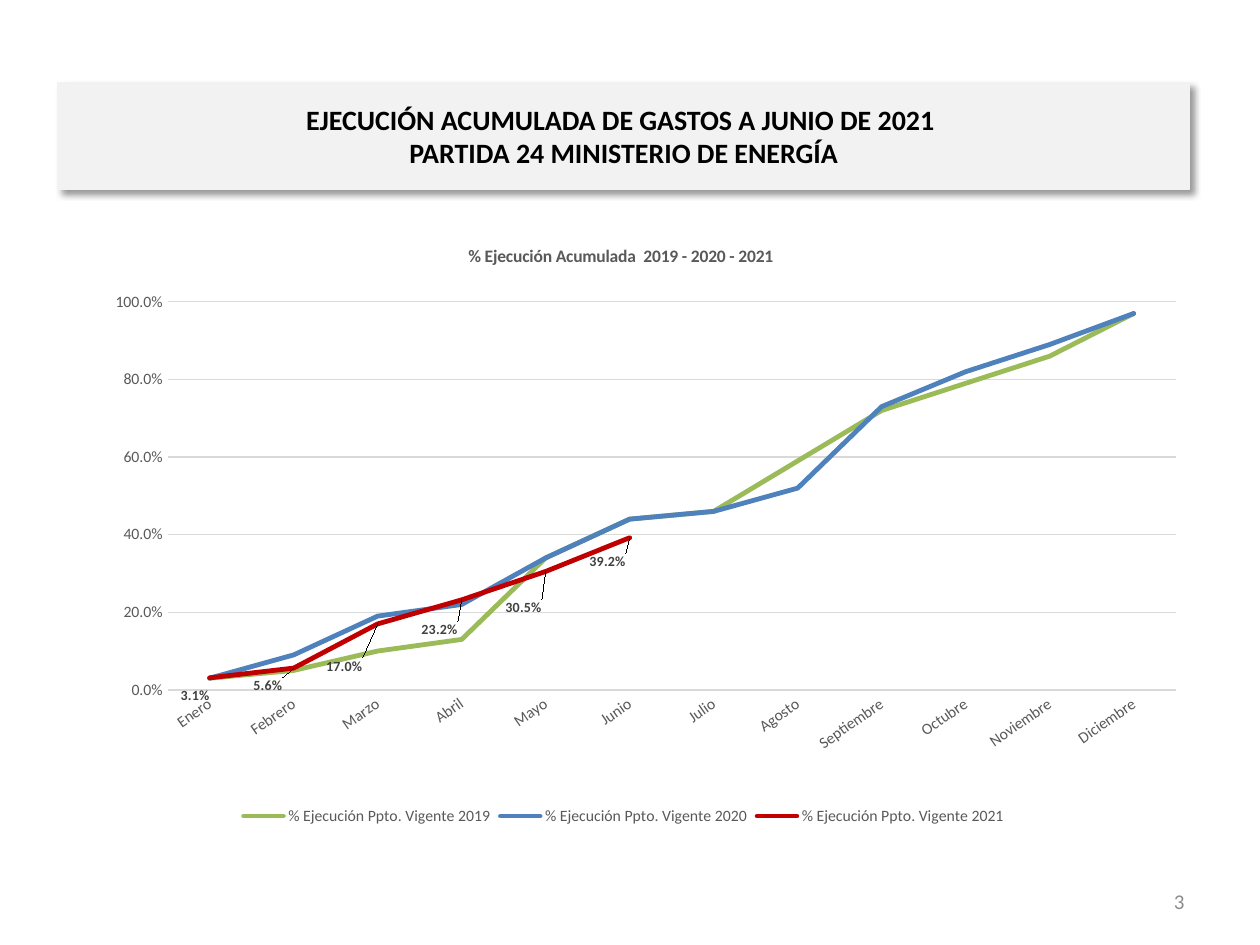
from lxml import etree
from pptx import Presentation, util as u
from pptx.chart.data import CategoryChartData
from pptx.dml.color import RGBColor
from pptx.enum import chart as ch, shapes, text
from pptx.oxml import parse_xml
from pptx.oxml.ns import nsdecls, qn

BLACK = RGBColor(0x00, 0x00, 0x00)
PANEL = RGBColor(0xF2, 0xF2, 0xF2)
GRID = RGBColor(0xD9, 0xD9, 0xD9)
GREY = RGBColor(0x59, 0x59, 0x59)
DARK = RGBColor(0x40, 0x40, 0x40)
PALE = RGBColor(0x8C, 0x8C, 0x8C)
GREEN = RGBColor(0x9B, 0xBB, 0x59)
BLUE = RGBColor(0x4F, 0x81, 0xBD)
RED = RGBColor(0xC0, 0x00, 0x00)

# Content
HEAD = ["EJECUCIÓN ACUMULADA DE GASTOS A JUNIO DE 2021 ",
        "PARTIDA 24 MINISTERIO DE ENERGÍA"]
TITLE = "% Ejecución Acumulada  2019 - 2020 - 2021"
PAGE = "3"
MONTHS = ["Enero", "Febrero", "Marzo", "Abril", "Mayo", "Junio", "Julio",
          "Agosto", "Septiembre", "Octubre", "Noviembre", "Diciembre"]
SERIES = [
    ("2019", GREEN, [0.03, 0.05, 0.1, 0.13, 0.34, 0.44,
                     0.46, 0.59, 0.72, 0.79, 0.86, 0.97]),
    ("2020", BLUE, [0.03, 0.09, 0.19, 0.22, 0.34, 0.44,
                    0.46, 0.52, 0.73, 0.82, 0.89, 0.97]),
    ("2021", RED, [0.031, 0.056, 0.17, 0.232, 0.305, 0.392]),
]
# Label shifts for 2021, as shares of the chart's width and height
SHIFTS = [(-0.03, 0.03), (-0.04, 0.03), (-0.05, 0.07),
          (-0.04, 0.05), (-0.04, 0.06), (-0.04, 0.04)]
LEFT, WIDTH = u.Inches(0.46), u.Inches(8.98)
C15 = "http://schemas.microsoft.com/office/drawing/2012/chart"


def style(font, size, color, bold=False):
    look = {"name": "Calibri", "size": u.Pt(size), "bold": bold}
    for key, val in look.items():
        setattr(font, key, val)
    font.color.rgb = color


def stroke(line, color, width):
    line.color.rgb = color
    line.width = u.Pt(width)


def layout(**vals):
    """Manual chart layout; keys are c:manualLayout children in order."""
    node = etree.Element(qn("c:layout"))
    man = etree.SubElement(node, qn("c:manualLayout"))
    for key, val in vals.items():
        etree.SubElement(man, qn("c:" + key)).set("val", str(val))
    return node


def place(parent, node, after):
    """Put a layout after the named child, replacing any present one."""
    for old in parent.findall(qn("c:layout")):
        parent.remove(old)
    if after is None:
        parent.insert(0, node)
    else:
        parent.find(qn(after)).addnext(node)


def add_head(slide):
    box = slide.shapes.add_shape(shapes.MSO_SHAPE.RECTANGLE, LEFT,
                                 u.Inches(0.66), WIDTH, u.Inches(0.84))
    box.fill.solid()
    box.fill.fore_color.rgb = PANEL
    stroke(box.line, PANEL, 0.75)
    box.shadow.inherit = False
    box._element.spPr.find(qn("a:effectLst")).append(parse_xml(
        f'<a:outerShdw {nsdecls("a")} blurRad="{u.Pt(4)}" dist="{u.Pt(3)}" '
        'dir="2700000" algn="tl" rotWithShape="0"><a:srgbClr val="000000">'
        '<a:alpha val="40000"/></a:srgbClr></a:outerShdw>'))
    frame = box.text_frame
    frame.vertical_anchor = text.MSO_ANCHOR.MIDDLE
    para = frame.paragraphs[0]
    para.text = "\v".join(HEAD)
    para.alignment = text.PP_ALIGN.CENTER
    for run in para.runs:
        style(run.font, 16, BLACK, True)


def add_graph(slide):
    data = CategoryChartData(number_format="0.0%")
    data.categories = MONTHS
    for year, _, vals in SERIES:
        gap = [None] * (len(MONTHS) - len(vals))
        data.add_series(f"% Ejecución Ppto. Vigente {year}", vals + gap)
    chart = slide.shapes.add_chart(ch.XL_CHART_TYPE.LINE, LEFT, u.Inches(1.77),
                                   WIDTH, u.Inches(4.82), data).chart
    style(chart.font, 10, BLACK)

    # Title and plot area
    chart.has_title = True
    para = chart.chart_title.text_frame.paragraphs[0]
    para.text = TITLE
    style(para.runs[0].font, 10, GREY, True)
    place(chart.chart_title._element,
          layout(xMode="edge", yMode="edge", x=0.36, y=0.03), "c:tx")
    place(chart._chartSpace.chart.plotArea,
          layout(layoutTarget="inner", xMode="edge", yMode="edge",
                 x=0.097, y=0.13, w=0.891, h=0.639), None)

    # Legend
    chart.has_legend = True
    chart.legend.position = ch.XL_LEGEND_POSITION.BOTTOM
    chart.legend.include_in_layout = False
    style(chart.legend.font, 9, GREY)

    # Axes
    cat, val = chart.category_axis, chart.value_axis
    for axis in (cat, val):
        axis.major_tick_mark = axis.minor_tick_mark = ch.XL_TICK_MARK.NONE
        style(axis.tick_labels.font, 9, GREY)
    stroke(cat.format.line, GRID, 1)
    body = cat._element.find(qn("c:txPr")).find(qn("a:bodyPr"))
    body.set("rot", str(-35 * 60000))
    limits = {"minimum_scale": 0, "maximum_scale": 1, "major_unit": 0.2}
    for key, num in limits.items():
        setattr(val, key, num)
    val.format.line.fill.background()
    stroke(val.major_gridlines.format.line, GRID, 0.75)
    val.tick_labels.number_format = "0.0%"
    val.tick_labels.number_format_is_linked = False

    # Lines with round ends
    for line, (_, color, _) in zip(chart.plots[0].series, SERIES):
        line.smooth = False
        stroke(line.format.line, color, 2.75)
        pen = line._element.find(qn("c:spPr")).find(qn("a:ln"))
        pen.set("cap", "rnd")
        etree.SubElement(pen, qn("a:round"))

    # Labels of the last series, without leader lines
    labels = line.data_labels
    labels.show_value = True
    labels.number_format = "0.0%"
    labels.number_format_is_linked = False
    style(labels.font, 8, DARK, True)
    for i, (x, y) in enumerate(SHIFTS):
        label = line.points[i].data_label
        style(label.font, 8, DARK, True)
        label.position = ch.XL_LABEL_POSITION.RIGHT
        place(labels._element.findall(qn("c:dLbl"))[i],
              layout(x=x, y=y), "c:idx")
    labels._element.append(parse_xml(
        f'<c:extLst {nsdecls("c")}>'
        f'<c:ext uri="{{CE6537A1-D6FC-4f65-9D91-7224C49458BB}}" '
        f'xmlns:c15="{C15}"><c15:showLeaderLines val="0"/>'
        '</c:ext></c:extLst>'))


def add_page(slide):
    box = slide.shapes.add_textbox(u.Inches(7.17), u.Inches(6.95),
                                   u.Inches(2.33), u.Inches(0.4))
    frame = box.text_frame
    frame.word_wrap = True
    frame.vertical_anchor = text.MSO_ANCHOR.MIDDLE
    para = frame.paragraphs[0]
    para.text = PAGE
    para.alignment = text.PP_ALIGN.RIGHT
    style(para.runs[0].font, 12, PALE)


def main():
    deck = Presentation()
    deck.slide_width, deck.slide_height = u.Inches(10), u.Inches(7.5)
    slide = deck.slides.add_slide(deck.slide_layouts[6])
    add_head(slide)
    add_graph(slide)
    add_page(slide)
    deck.save("out.pptx")


if __name__ == "__main__":
    main()
